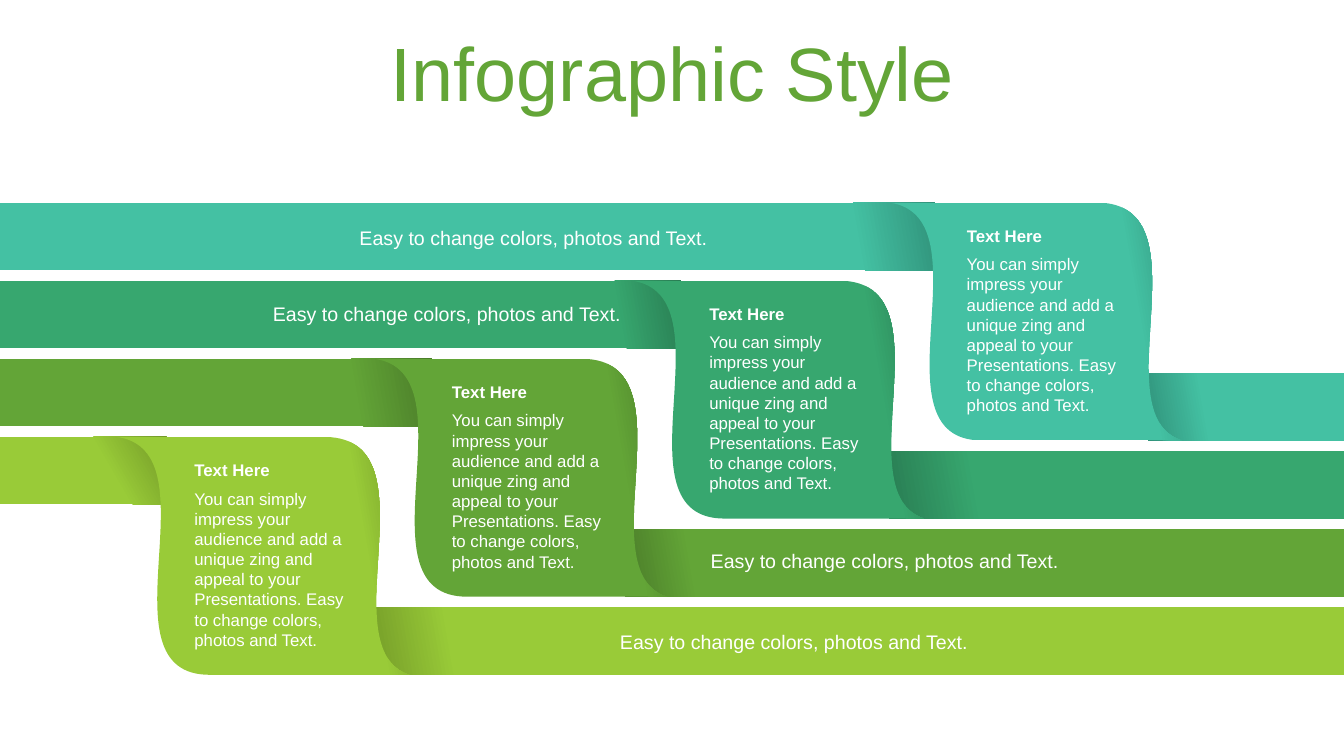
"""Build a slide of four folded ribbons that step down from right to left."""
import pptx
import pptx.dml.color
import pptx.enum.shapes
import pptx.enum.text
import pptx.oxml.ns
import pptx.util
from dataclasses import dataclass
from lxml import etree

TITLE = "Infographic Style"
HEAD = "Text Here"
BODY = ("You can simply impress your audience and add a unique zing and appeal "
        "to your Presentations. Easy to change colors, photos and Text.")
LABEL = "Easy to change colors, photos and Text."

LEFT = pptx.enum.text.PP_ALIGN.LEFT
RIGHT = pptx.enum.text.PP_ALIGN.RIGHT
SHAPES = pptx.enum.shapes.MSO_SHAPE
ANCHOR = pptx.enum.text.MSO_ANCHOR
FIT = pptx.enum.text.MSO_AUTO_SIZE

ROWS = [
    dict(hue=("44C1A3", "31937B"), end=9.27, start=11.39, fade=(91, 70),
         tilt=10, label=(3.45, 2.17, LEFT)),
    dict(hue=("37A76F", "297D53"), end=6.75, start=8.82, fade=(90, 80),
         tilt=10, label=(2.59, 2.93, LEFT)),
    dict(hue=("63A537", "4A7C29"), end=4.28, start=6.2, fade=(81, 90),
         tilt=10, label=(6.62, 5.38, RIGHT)),
    dict(hue=("99CB38", "739A28"), end=1.65, start=3.65, fade=(63, 91),
         tilt=30, label=(5.72, 6.18, RIGHT)),
]


@dataclass
class Theme:
    """Colours, font and type sizes."""
    title: str = "63A537"
    text: str = "FFFFFF"
    font: str = "Arial"
    big: int = 54
    mid: int = 14
    small: int = 12


LOOK = Theme()
WIDE, HIGH = 13.33, 7.5
FOLD_X, FOLD_Y = 8.82, 2.01
STEP_X, STEP_Y = 7.66 / 3, 3.1 / 4
BAND, DROP = 0.67, 1.69
FOLD_FADE, FOLD_TILT = 81, 10
FOLD_H = BAND + DROP
CORNERS = [(0, 0), (2.07, 0), (2.9, FOLD_H), (0.92, FOLD_H), (0, 0)]
BENDS = {1: [(3.17, 0.02), (2.1, 2.1)], 3: [(-0.2, FOLD_H), (1, 0.14)]}


def inch(*nums):
    return [pptx.util.Inches(num) for num in nums]


def tint(code):
    return pptx.dml.color.RGBColor.from_string(code)


def write(frame, text, size, color, bold=False, align=LEFT):
    para = frame.paragraphs[0]
    para.alignment = align
    run = para.add_run()
    run.text = text
    run.font.name = LOOK.font
    run.font.size = pptx.util.Pt(size)
    run.font.bold = bold
    run.font.color.rgb = tint(color)
    return para


def shade(shape, hue, fade, tilt):
    shape.shadow.inherit = False
    shape.line.fill.background()
    shape.fill.gradient()
    shape.fill.gradient_angle = tilt
    for stop, code, place in zip(shape.fill.gradient_stops, hue, (fade / 100, 1)):
        stop.color.rgb = tint(code)
        stop.position = place


def band(slide, left, top, width, row, fade, tilt, turn=0):
    shape = slide.shapes.add_shape(SHAPES.RECTANGLE, *inch(left, top, width, BAND))
    shape.rotation = turn
    shade(shape, row["hue"], fade, tilt)


def bend(line, dots):
    name = pptx.oxml.ns.qn
    line.tag = name("a:cubicBezTo")
    for spot, dot in enumerate(dots):
        x, y = inch(*dot)
        point = etree.Element(name("a:pt"), x=str(x), y=str(y))
        line.insert(spot, point)


def fold(slide, left, top, hue):
    dots = [inch(left + x, top + y) for x, y in CORNERS]
    pen = slide.shapes.build_freeform(*dots[0])
    pen.add_line_segments(dots[1:], close=True)
    shape = pen.convert_to_shape()
    lines = list(shape.element.iter(pptx.oxml.ns.qn("a:lnTo")))
    for spot, pulls in BENDS.items():
        curve = etree.SubElement(lines[spot].getparent(),
                                 pptx.oxml.ns.qn("a:cubicBezTo"))
        lines[spot].addprevious(curve)
        curve.extend(list(lines[spot]))
        lines[spot].getparent().remove(lines[spot])
        bend(curve, pulls)
    shade(shape, hue, FOLD_FADE, FOLD_TILT)


def note(slide, left, top, width, height, text, bold=False):
    frame = slide.shapes.add_textbox(*inch(left, top, width, height)).text_frame
    frame.word_wrap = True
    frame.auto_size = FIT.SHAPE_TO_FIT_TEXT
    write(frame, text, LOOK.small, LOOK.text, bold)


def label(slide, left, top, align):
    shape = slide.shapes.add_shape(SHAPES.ROUND_2_SAME_RECTANGLE,
                                   *inch(left, top, 4.11, 0.35))
    shape.shadow.inherit = False
    shape.fill.background()
    shape.line.fill.background()
    frame = shape.text_frame
    frame.word_wrap = True
    frame.auto_size = FIT.SHAPE_TO_FIT_TEXT
    frame.vertical_anchor = ANCHOR.TOP
    if align == RIGHT:
        frame.margin_right = pptx.util.Inches(0.21)
    write(frame, LABEL, LOOK.mid, LOOK.text, align=align)


def head(slide):
    title = slide.shapes.title
    title.left, title.top, title.width, title.height = inch(0.34, 0.37, 12.66, 0.79)
    frame = title.text_frame
    frame.auto_size = FIT.NONE
    frame.vertical_anchor = ANCHOR.MIDDLE
    para = write(frame, TITLE, LOOK.big, LOOK.title,
                 align=pptx.enum.text.PP_ALIGN.CENTER)
    para.line_spacing = 0.9
    para.space_before = pptx.util.Pt(10)


def main():
    deck = pptx.Presentation()
    deck.slide_width, deck.slide_height = inch(WIDE, HIGH)
    slide = deck.slides.add_slide(deck.slide_layouts[5])
    head(slide)
    for step, row in enumerate(ROWS):
        x, y = FOLD_X - step * STEP_X, FOLD_Y + step * STEP_Y
        first, last = row["fade"]
        start = row["start"]
        band(slide, 0, y, row["end"], row, first, row["tilt"])
        band(slide, start, y + DROP, WIDE - start, row, last, FOLD_TILT, 180)
        fold(slide, x, y, row["hue"])
        note(slide, x + 0.67, y + 0.46, 1.76, 1.72, BODY)
        note(slide, x + 0.67, y + 0.18, 1.78, 0.3, HEAD, True)
        label(slide, *row["label"])
    deck.save("out.pptx")


if __name__ == "__main__":
    main()
